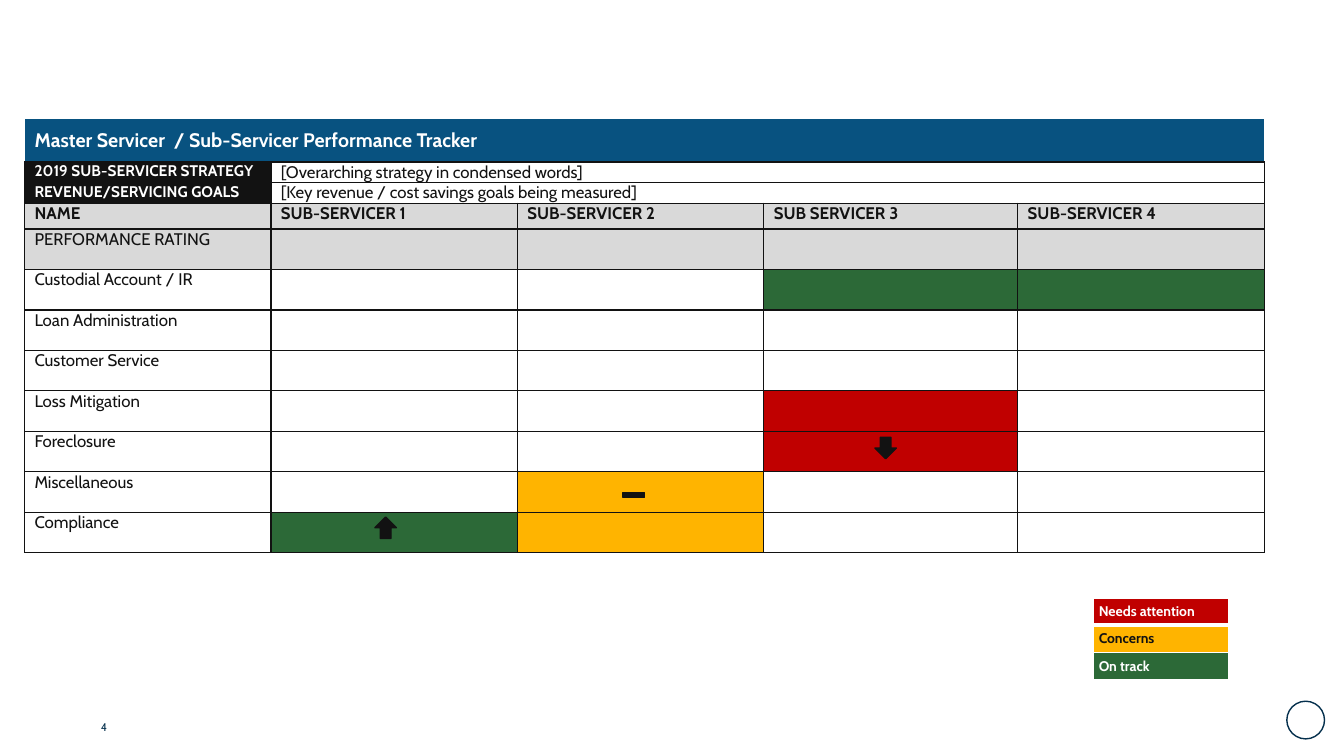
from dataclasses import dataclass

import lxml.etree
import pptx
import pptx.dml.color
import pptx.enum.shapes
import pptx.enum.text
import pptx.oxml.ns
import pptx.shapes.autoshape
import pptx.slide
import pptx.table
import pptx.text.text
import pptx.util
from pptx.util import Cm

FONT = "Cabin"
COLORS = {
    "white": "FFFFFF",
    "ink": "121212",
    "blue": "085280",
    "navy": "05304D",
    "grey": "D9D9D9",
    "red": "C00000",
    "amber": "FFB400",
    "green": "2C6937",
}
SHAPES = pptx.enum.shapes.MSO_SHAPE


@dataclass
class CellLook:
    text: str = ""
    fill: str = "white"
    color: str = "ink"
    size: float = 12
    bold: bool = False
    margin_x: float = 0.25
    margin_y: float = 0


@dataclass
class Border:
    color: str = "ink"
    width: float = 1


@dataclass
class Mark:
    kind: pptx.enum.shapes.MSO_SHAPE
    left: float
    top: float
    width: float
    height: float


def rgb(name: str) -> pptx.dml.color.RGBColor:
    return pptx.dml.color.RGBColor.from_string(COLORS[name])


def write(para: pptx.text.text._Paragraph, text: str, size: float, color: str, bold: bool = False) -> None:
    para.font.size = pptx.util.Pt(size)
    if not text:
        return
    span = para.add_run()
    span.text = text
    span.font.name = FONT
    span.font.size = pptx.util.Pt(size)
    span.font.bold = bold
    span.font.color.rgb = rgb(color)


def set_borders(cell: pptx.table._Cell, borders: dict[str, Border]) -> None:
    properties = cell._tc.get_or_add_tcPr()
    for position, side in enumerate("LRTB"):
        border = borders.get(side, Border())
        line = lxml.etree.Element(pptx.oxml.ns.qn(f"a:ln{side}"), w=str(pptx.util.Pt(border.width)))
        solid = lxml.etree.SubElement(line, pptx.oxml.ns.qn("a:solidFill"))
        lxml.etree.SubElement(solid, pptx.oxml.ns.qn("a:srgbClr"), val=COLORS[border.color])
        properties.insert(position, line)


def style_cell(cell: pptx.table._Cell, look: CellLook, borders: dict[str, Border]) -> None:
    cell.margin_left = cell.margin_right = Cm(look.margin_x)
    cell.margin_top = cell.margin_bottom = Cm(look.margin_y)
    cell.fill.solid()
    cell.fill.fore_color.rgb = rgb(look.fill)
    set_borders(cell, borders)
    write(cell.text_frame.paragraphs[0], look.text, look.size, look.color, look.bold)


def add_grid(page: pptx.slide.Slide, left: float, top: float,
             widths: list[float], heights: list[float]) -> pptx.table.Table:
    table = page.shapes.add_table(len(heights), len(widths), Cm(left), Cm(top),
                                  Cm(sum(widths)), Cm(sum(heights))).table
    table.first_row = table.horz_banding = False
    for column, width in zip(table.columns, widths):
        column.width = Cm(width)
    for row, height in zip(table.rows, heights):
        row.height = Cm(height)
    return table


def add_tracker(page: pptx.slide.Slide) -> None:
    title = CellLook("Master Servicer  / Sub-Servicer Performance Tracker", "blue", "white", 14, True,
                     margin_y=0.25)
    goals = [
        ("2019 SUB-SERVICER STRATEGY", "[Overarching strategy in condensed words]"),
        ("REVENUE/SERVICING GOALS", "[Key revenue / cost savings goals being measured]"),
    ]
    headings = ["NAME", "SUB-SERVICER 1", "SUB-SERVICER 2", "SUB SERVICER 3", "SUB-SERVICER 4"]
    # Each measure with the fill of the servicers that have a rating
    measures: list[tuple[str, dict[int, str]]] = [
        ("Custodial Account / IR", {3: "green", 4: "green"}),
        ("Loan Administration", {}),
        ("Customer Service", {}),
        ("Loss Mitigation", {3: "red"}),
        ("Foreclosure", {3: "red"}),
        ("Miscellaneous", {2: "amber"}),
        ("Compliance", {1: "green", 2: "amber"}),
    ]
    count = len(headings)
    looks = [[title] + [CellLook(fill="blue")] * (count - 1)]
    for label, goal in goals:
        looks.append([CellLook(label, "ink", "white", 11, True), CellLook(goal)] + [CellLook()] * (count - 2))
    looks.append([CellLook(heading, "grey", bold=True) for heading in headings])
    looks.append([CellLook("PERFORMANCE RATING", "grey")] + [CellLook(fill="grey")] * (count - 1))
    for measure, ratings in measures:
        looks.append([CellLook(measure)] +
                     [CellLook(fill=ratings.get(column, "white")) for column in range(1, count)])

    heights = [1.1, 0.52, 0.52, 0.65] + [1.02] * (len(measures) + 1)
    table = add_grid(page, 0.62, 2.98, [6.21, 6.21, 6.21, 6.4, 6.21], heights)
    table.cell(0, 0).merge(table.cell(0, count - 1))
    for row in (1, 2):
        table.cell(row, 1).merge(table.cell(row, count - 1))
    for row, row_looks in enumerate(looks):
        borders = {side: Border("white") for side in "LRT"} if row == 0 else {}
        for column, look in enumerate(row_looks):
            style_cell(table.cell(row, column), look, borders)


def add_legend(page: pptx.slide.Slide) -> None:
    entries = [("Needs attention", "red", "white"), ("Concerns", "amber", "ink"), ("On track", "green", "white")]
    table = add_grid(page, 27.56, 15.07, [3.4], [0.68] * len(entries))
    for row, (text, fill, color) in enumerate(entries):
        borders = {side: Border("white") for side in "LRTB"}
        if row == 0:
            borders["B"] = Border("white", 3)
        elif row == 1:
            borders["T"] = Border("white", 3)
        style_cell(table.cell(row, 0), CellLook(text, fill, color, 10, True, 0.13, 0.13), borders)


def add_mark(page: pptx.slide.Slide, mark: Mark, color: str) -> pptx.shapes.autoshape.Shape:
    shape = page.shapes.add_shape(mark.kind, Cm(mark.left), Cm(mark.top), Cm(mark.width), Cm(mark.height))
    shape.shadow.inherit = False
    shape.fill.solid()
    shape.fill.fore_color.rgb = rgb(color)
    shape.line.color.rgb = rgb(color)
    shape.line.width = pptx.util.Pt(1)
    return shape


def add_page_number(page: pptx.slide.Slide) -> None:
    box = page.shapes.add_textbox(Cm(2.54), Cm(18.16), Cm(0.86), Cm(0.33))
    frame = box.text_frame
    frame.word_wrap = True
    frame.margin_left = frame.margin_right = frame.margin_top = frame.margin_bottom = 0
    frame.vertical_anchor = pptx.enum.text.MSO_ANCHOR.MIDDLE
    write(frame.paragraphs[0], "4", 8, "navy")


def main() -> None:
    deck = pptx.Presentation()
    deck.slide_width, deck.slide_height = Cm(33.87), Cm(19.05)
    page = deck.slides.add_slide(deck.slide_layouts[6])

    # Footer: plain ring and page number
    ring = add_mark(page, Mark(SHAPES.OVAL, 32.43, 17.67, 0.95, 0.95), "navy")
    ring.fill.background()
    add_page_number(page)

    # Tables
    add_legend(page)
    add_tracker(page)

    # Trend marks on the rated cells
    trends = [
        Mark(SHAPES.UP_ARROW, 9.45, 13.03, 0.54, 0.54),
        Mark(SHAPES.RECTANGLE, 15.7, 12.41, 0.54, 0.13),
        Mark(SHAPES.DOWN_ARROW, 22.05, 11.02, 0.54, 0.54),
    ]
    for trend in trends:
        add_mark(page, trend, "ink")

    deck.save("out.pptx")


if __name__ == "__main__":
    main()
